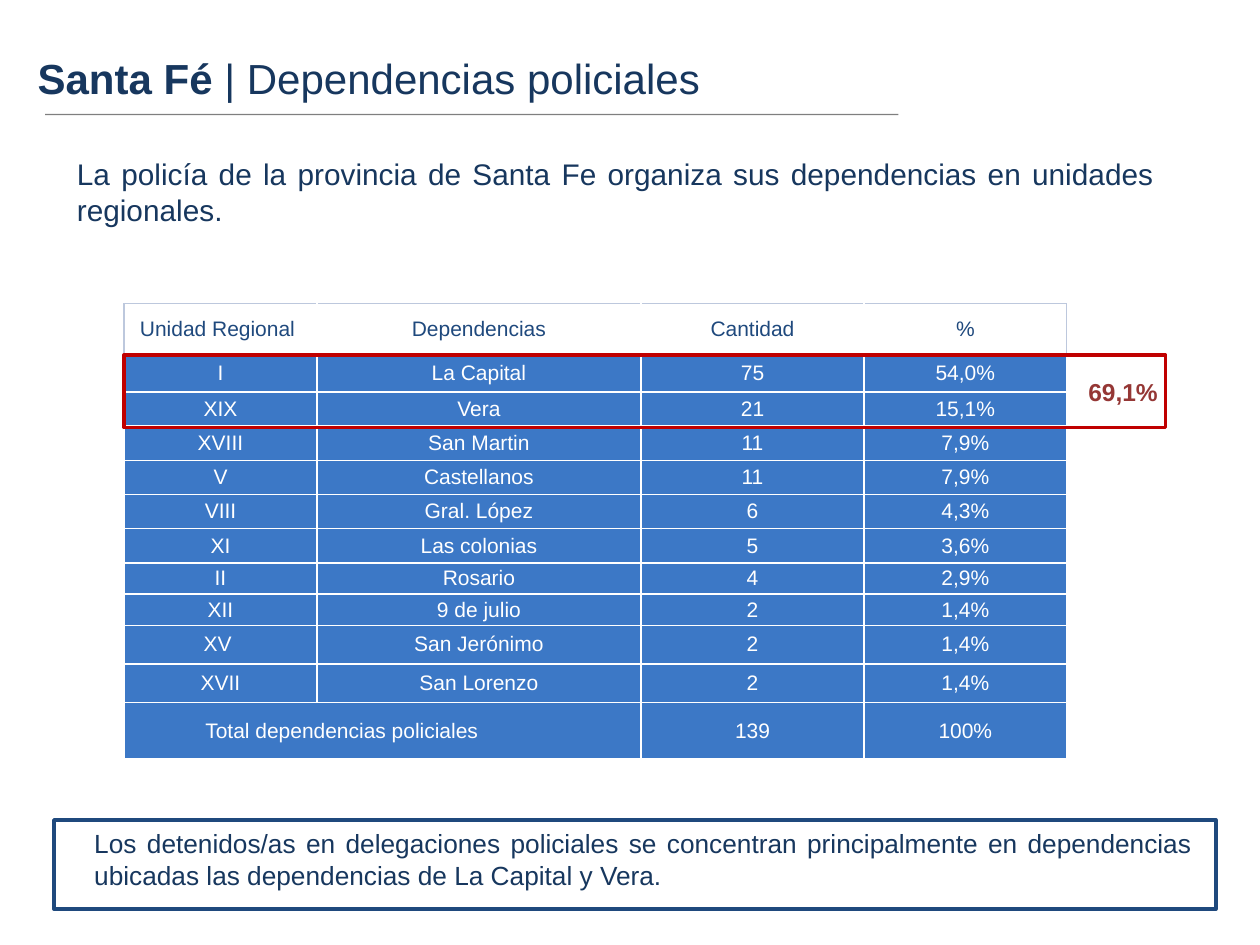
"""Build the slide on police stations in Santa Fe."""
from dataclasses import dataclass

from lxml.etree import SubElement
from pptx import Presentation
from pptx.dml.color import RGBColor as Color
from pptx.enum.shapes import MSO_CONNECTOR as Connector, MSO_SHAPE as Shape
from pptx.enum.text import MSO_ANCHOR as Anchor, MSO_AUTO_SIZE as AutoSize, PP_ALIGN as Align
from pptx.oxml.ns import qn
from pptx.util import Cm, Pt


@dataclass(frozen=True)
class Theme:
    font: str = "Arial"
    navy: str = "17375E"
    blue: str = "1F497D"
    cell: str = "3C78C6"
    white: str = "FFFFFF"
    edge: str = "BDC8DD"
    red: str = "C00000"
    dark_red: str = "953735"
    black: str = "000000"
    title: int = 24
    intro: int = 17
    note: int = 15
    share: int = 14
    table: int = 12


THEME = Theme()
COLUMNS = (3.89, 6.53, 4.5, 4.08)
ROWS = (1.03, 0.75) + (0.69,) * 5 + (0.63,) * 2 + (0.78,) * 2 + (1.14,)
HEADINGS = ("Unidad Regional ", "Dependencias", "Cantidad", "%")
UNITS = (
    ("I", "La Capital", "75", "54,0%"),
    ("XIX", "Vera", "21", "15,1%"),
    ("XVIII", "San Martin", "11", "7,9%"),
    ("V", "Castellanos", "11", "7,9%"),
    ("VIII", "Gral. López", "6", "4,3%"),
    ("XI", "Las colonias", "5", "3,6%"),
    ("II", "Rosario", "4", "2,9%"),
    ("XII", "9 de julio", "2", "1,4%"),
    ("XV ", "San Jerónimo", "2", "1,4%"),
    ("XVII", "San Lorenzo", "2", "1,4%"),
)
TOTAL = ("Total dependencias policiales", "", "139", "100%")


def add_span(para, text, size, color, bold=False):
    """Append one formatted run to a paragraph."""
    span = para.add_run()
    span.text = text
    span.font.name = THEME.font
    span.font.size = Pt(size)
    span.font.bold = bold
    span.font.color.rgb = Color.from_string(color)


def add_text(page, place, spans, size, color, align=Align.LEFT, wrap=True):
    """Add a text box whose spans are pairs of text and boldness."""
    box = page.shapes.add_textbox(*map(Cm, place))
    frame = box.text_frame
    frame.word_wrap = wrap
    frame.auto_size = AutoSize.NONE
    para = frame.paragraphs[0]
    para.alignment = align
    for text, bold in spans:
        add_span(para, text, size, color, bold)


def add_frame(page, place, color):
    """Add an unfilled rectangle with a coloured outline."""
    box = page.shapes.add_shape(Shape.RECTANGLE, *map(Cm, place))
    box.shadow.inherit = False
    box.fill.background()
    box.line.color.rgb = Color.from_string(color)
    box.line.width = Pt(2)


def add_rule(page, left, right, top):
    """Add the half-transparent horizontal line under the title."""
    rule = page.shapes.add_connector(Connector.STRAIGHT, Cm(left), Cm(top), Cm(right), Cm(top))
    rule.line.width = Pt(0.75)
    rule.line.color.rgb = Color.from_string(THEME.black)
    properties = rule._element.spPr
    tint = next(properties.iter(qn("a:srgbClr")))
    SubElement(tint, qn("a:alpha"), val="50000")
    SubElement(properties, qn("a:effectLst"))


def set_borders(cell, edges):
    """Draw the four sides of a cell, pale where named in edges."""
    properties = cell._tc.get_or_add_tcPr()
    for side in "LRTB":
        color, width = (THEME.edge, 0.75) if side in edges else (THEME.white, 1)
        line = SubElement(properties, qn(f"a:ln{side}"), w=str(Pt(width)))
        fill = SubElement(line, qn("a:solidFill"))
        SubElement(fill, qn("a:srgbClr"), val=color)


def fill_cell(cell, text, background, color, edges=""):
    """Style a table cell and write its centred text."""
    set_borders(cell, edges)
    cell.fill.solid()
    cell.fill.fore_color.rgb = Color.from_string(background)
    cell.vertical_anchor = Anchor.MIDDLE
    cell.margin_left = cell.margin_right = cell.margin_top = cell.margin_bottom = 0
    para = cell.text_frame.paragraphs[0]
    para.alignment = Align.CENTER
    if text:
        add_span(para, text, THEME.table, color)


def add_units_table(page, left, top):
    """Add the table of regional units with its merged total row."""
    records = (HEADINGS, *UNITS, TOTAL)
    table = page.shapes.add_table(
        len(ROWS), len(COLUMNS), Cm(left), Cm(top), Cm(sum(COLUMNS)), Cm(sum(ROWS))
    ).table
    table.first_row = table.horz_banding = False
    for column, width in zip(table.columns, COLUMNS):
        column.width = Cm(width)
    for row, height in zip(table.rows, ROWS):
        row.height = Cm(height)
    for j, edges in enumerate(("LT", "T", "T", "TR")):
        fill_cell(table.cell(0, j), HEADINGS[j], THEME.white, THEME.blue, edges)
    for i, record in enumerate(records[1:], 1):
        for j, text in enumerate(record):
            fill_cell(table.cell(i, j), text, THEME.cell, THEME.white)
    last = len(ROWS) - 1
    total = table.cell(last, 0)
    total.merge(table.cell(last, 1))
    total.margin_left = Cm(1.64)
    total.text_frame.paragraphs[0].alignment = Align.LEFT


def main():
    """Assemble and save the deck."""
    deck = Presentation()
    deck.slide_width, deck.slide_height = Cm(25.4), Cm(19.05)
    page = deck.slides.add_slide(deck.slide_layouts[6])
    add_text(page, (0.51, 0.94, 18.8, 1.57),
             (("Santa Fé", True), (" | Dependencias policiales", False)),
             THEME.title, THEME.navy)
    add_rule(page, 0.91, 18.11, 2.31)
    add_text(page, (1.3, 3.02, 22.22, 2.11),
             (("La policía de la provincia de Santa Fe organiza sus dependencias "
               "en unidades regionales.", False),),
             THEME.intro, THEME.navy, Align.JUSTIFY)
    add_units_table(page, 2.5, 6.12)
    add_frame(page, (2.5, 7.16, 21, 1.46), THEME.red)
    add_text(page, (21.69, 7.47, 1.93, 0.86), (("69,1%", True),),
             THEME.share, THEME.dark_red, wrap=False)
    add_text(page, (1.65, 16.56, 22.63, 1.55),
             (("Los detenidos/as en delegaciones policiales se concentran principalmente "
               "en dependencias ubicadas las dependencias de La Capital y Vera.", False),),
             THEME.note, THEME.navy, Align.JUSTIFY)
    add_frame(page, (1.09, 16.53, 23.42, 1.8), THEME.blue)
    deck.save("out.pptx")


if __name__ == "__main__":
    main()
